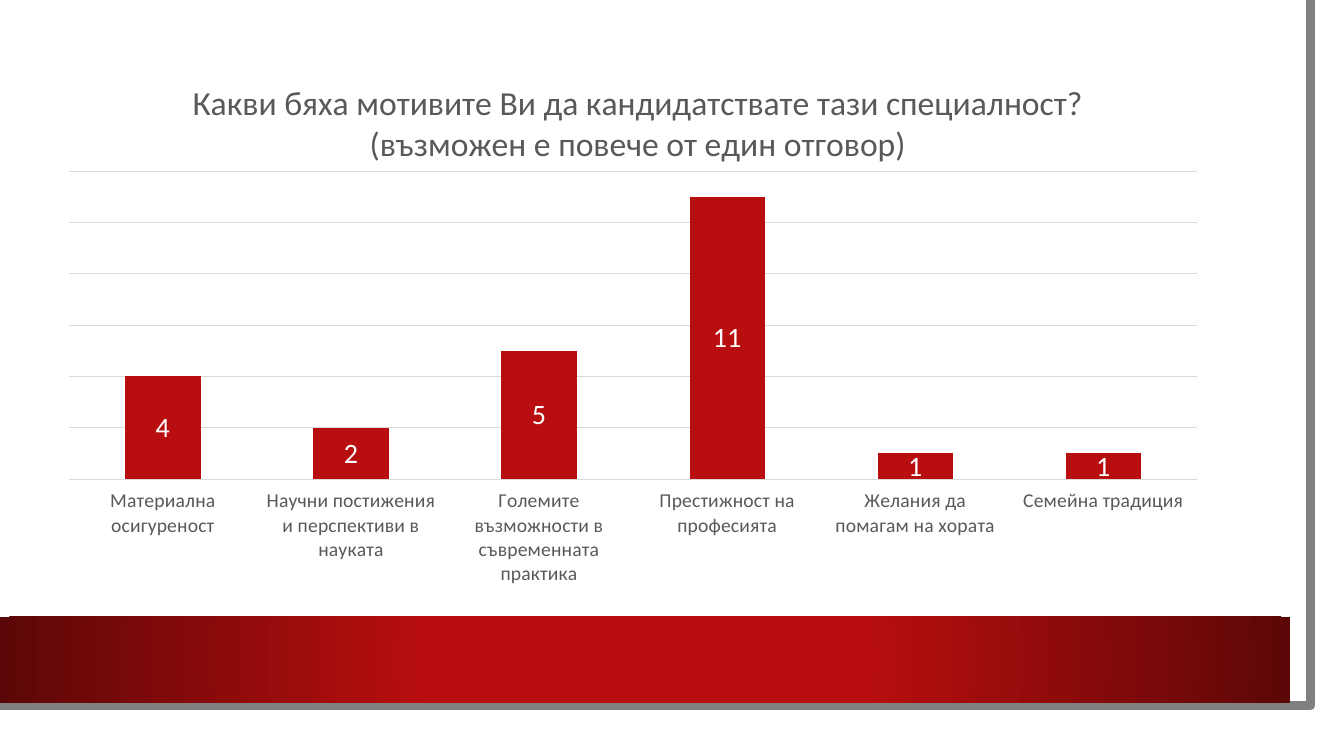
from pptx import Presentation
from pptx.chart.data import CategoryChartData
from pptx.dml.color import RGBColor
from pptx.enum.chart import XL_CHART_TYPE, XL_LABEL_POSITION, XL_TICK_LABEL_POSITION, XL_TICK_MARK
from pptx.enum.shapes import MSO_SHAPE
from pptx.oxml import parse_xml
from pptx.oxml.ns import nsdecls
from pptx.util import Inches, Pt

COLORS = {"white": "FFFFFF", "edge": "808080", "red": "B80E0F",
          "dark": "5C0707", "text": "595959", "grid": "D9D9D9", "black": "000000"}
TITLE = "Какви бяха мотивите Ви да кандидатствате тази специалност? (възможен е повече от един отговор)"
VOTES = {
    "Материална осигуреност": 4,
    "Научни постижения и перспективи в науката": 2,
    "Големите възможности в съвременната практика": 5,
    "Престижност на професията": 11,
    "Желания да помагам на хората": 1,
    "Семейна традиция": 1,
}


def color(name):
    return RGBColor.from_string(COLORS[name])


def style(font, size, tint="text", name="Calibri"):
    font.size, font.name, font.bold = Pt(size), name, False
    font.color.rgb = color(tint)


def write(frame, text, **look):
    """Put text in a frame with the given font format."""
    frame.text = text
    style(frame.paragraphs[0].runs[0].font, **look)


def add_rect(slide, box):
    rect = slide.shapes.add_shape(MSO_SHAPE.RECTANGLE, *map(Inches, box))
    rect.shadow.inherit = False
    rect.line.fill.background()
    return rect


def add_panel(slide, box):
    panel = add_rect(slide, box)
    panel.fill.solid()
    panel.fill.fore_color.rgb = color("white")


def add_edge(slide, box):
    """Draw the grey line down the right side and along the bottom."""
    left, top, width, height = box
    right, base = left + width, top + height
    path = slide.shapes.build_freeform(right - 0.03, top, scale=Inches(1))
    path.add_line_segments([(right, base), (left, base - 0.01)], close=False)
    edge = path.convert_to_shape()
    edge.shadow.inherit = False
    edge.fill.background()
    edge.line.color.rgb = color("edge")
    edge.line.width = Pt(6.5)


def add_band(slide, box):
    """Draw the red band that darkens away from its centre."""
    band = add_rect(slide, box)
    stops = "".join(
        f'<a:gs pos="{spot * 1000}"><a:srgbClr val="{COLORS[name]}"/></a:gs>'
        for spot, name in ((34, "red"), (100, "dark")))
    grad = parse_xml(
        f'<a:gradFill {nsdecls("a")} rotWithShape="1"><a:gsLst>{stops}</a:gsLst>'
        '<a:path path="circle"><a:fillToRect l="50000" t="50000" r="50000" b="50000"/>'
        '</a:path></a:gradFill>')
    band.element.spPr.find("{*}prstGeom").addnext(grad)


def place(part, index, **spots):
    """Give a chart part a manual layout in shares of the chart."""
    for old in part.findall("{*}layout"):
        part.remove(old)
    modes = '<c:layoutTarget val="inner"/>' if "w" in spots else ""
    modes += '<c:xMode val="edge"/><c:yMode val="edge"/>'
    sizes = "".join(f'<c:{key} val="{share}"/>' for key, share in spots.items())
    part.insert(index, parse_xml(
        f'<c:layout {nsdecls("c")}><c:manualLayout>{modes}{sizes}</c:manualLayout></c:layout>'))


def add_votes(slide, box):
    data = CategoryChartData()
    data.categories = list(VOTES)
    data.add_series("Series 1", list(VOTES.values()))
    chart = slide.shapes.add_chart(
        XL_CHART_TYPE.COLUMN_STACKED, *map(Inches, box), data).chart
    style(chart.font, 10, "black", "Arial Narrow")
    chart.has_legend = False
    chart.has_title = True
    write(chart.chart_title.text_frame, TITLE, size=24)
    chart.chart_title.include_in_layout = False
    place(chart.chart_title.element, 1, x=0.12, y=0.04)
    place(chart.element.find(".//{*}plotArea"), 0, x=0.02, y=0.22, w=0.96, h=0.57)

    plot = chart.plots[0]
    plot.gap_width, plot.overlap, plot.vary_by_categories = 150, 100, False
    bars = plot.series[0]
    bars.format.fill.solid()
    bars.format.fill.fore_color.rgb = color("red")
    labels = bars.data_labels
    labels.show_value = True
    labels.position = XL_LABEL_POSITION.CENTER
    style(labels.font, 20, "white")

    names = chart.category_axis
    names.major_tick_mark = XL_TICK_MARK.NONE
    names.tick_label_position = XL_TICK_LABEL_POSITION.LOW
    names.format.line.fill.background()
    style(names.tick_labels.font, 14)
    scale = chart.value_axis
    scale.minimum_scale, scale.maximum_scale, scale.major_unit = 0, 12, 2
    scale.has_major_gridlines = True
    scale.major_gridlines.format.line.color.rgb = color("grid")
    scale.major_gridlines.format.line.width = Pt(0.75)
    scale.visible = False


def main():
    deck = Presentation()
    deck.slide_width, deck.slide_height = Inches(13.33), Inches(7.5)
    slide = deck.slides.add_slide(deck.slide_layouts[6])
    add_panel(slide, (0, 0, 13.1, 7.27))
    add_edge(slide, (-0.03, 0, 12.88, 7.02))
    add_band(slide, (0, 6.12, 12.8, 0.85))
    add_votes(slide, (0.45, 0.52, 11.66, 5.36))
    deck.save("out.pptx")


if __name__ == "__main__":
    main()
